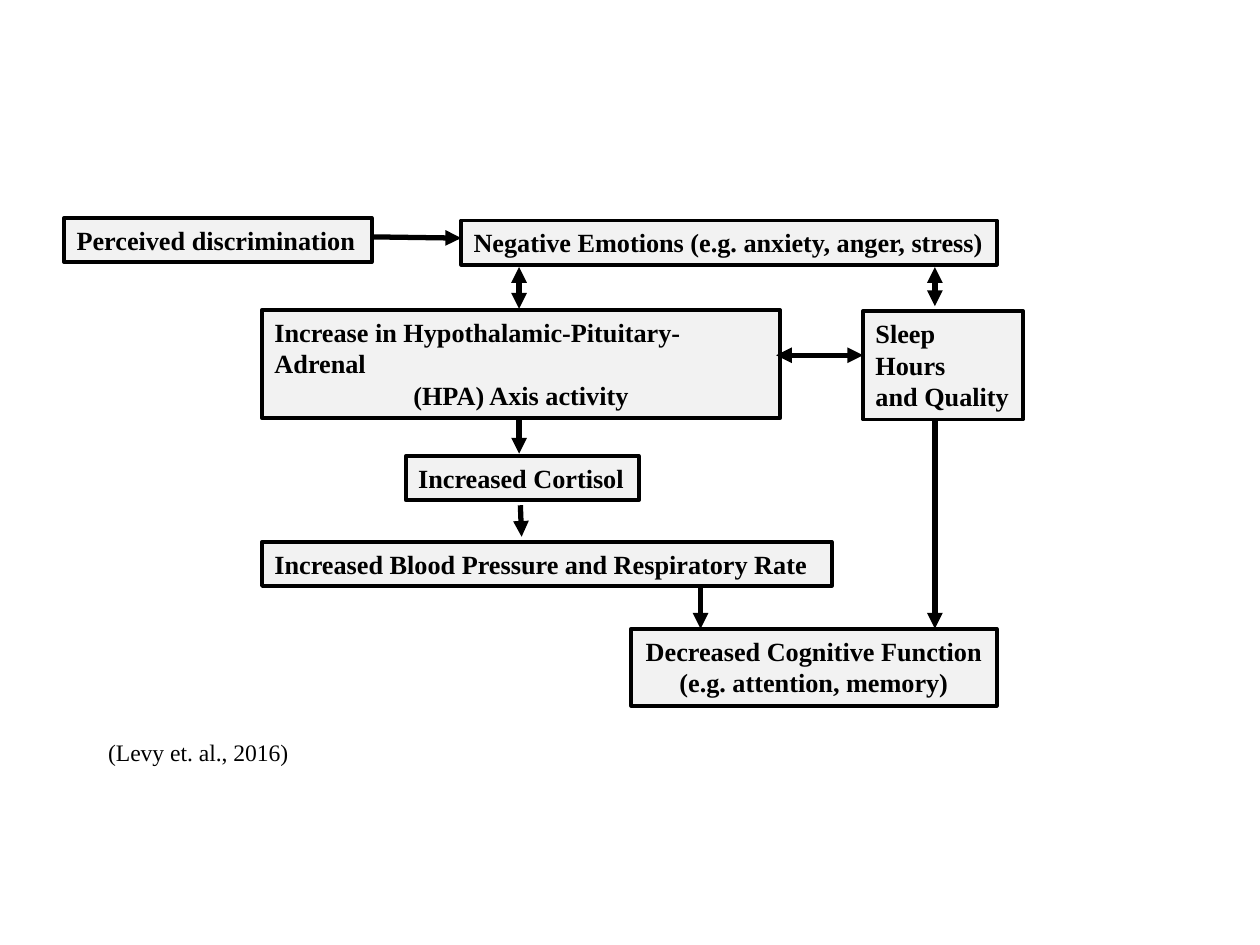
import pptx
import pptx.dml.color
import pptx.enum.shapes
import pptx.enum.text
import pptx.util
from lxml import etree
from pptx.oxml.ns import qn

COLORS = {"ink": "000000", "box": "F2F2F2"}
LEFT = pptx.enum.text.PP_ALIGN.LEFT
CENTER = pptx.enum.text.PP_ALIGN.CENTER


class Diagram:
    """Draw flow-chart elements on a slide with a grid of 100 columns and 75 rows."""

    font = "Times New Roman"
    cell = pptx.util.Inches(0.1)

    def __init__(self, prs):
        self.s = prs.slides.add_slide(prs.slide_layouts[6])

    def grid(self, *lengths):
        return [round(n * self.cell) for n in lengths]

    def color(self, name):
        return pptx.dml.color.RGBColor.from_string(COLORS[name])

    def set_text(self, sp, lines, size, bold):
        tf = sp.text_frame
        tf.word_wrap = True
        tf.auto_size = pptx.enum.text.MSO_AUTO_SIZE.SHAPE_TO_FIT_TEXT
        tf.vertical_anchor = pptx.enum.text.MSO_ANCHOR.TOP
        for i, (text, align) in enumerate(lines):
            p = tf.add_paragraph() if i else tf.paragraphs[0]
            p.text = text
            p.alignment = align
            p.font.name = self.font
            p.font.size = pptx.util.Pt(size)
            p.font.bold = bold
            p.font.color.rgb = self.color("ink")

    def box(self, col, row, cols, rows, *lines):
        rect = pptx.enum.shapes.MSO_SHAPE.RECTANGLE
        sp = self.s.shapes.add_shape(rect, *self.grid(col, row, cols, rows))
        sp.shadow.inherit = False
        sp.fill.solid()
        sp.fill.fore_color.rgb = self.color("box")
        sp.line.color.rgb = self.color("ink")
        sp.line.width = pptx.util.Pt(2.25)
        self.set_text(sp, lines, 15, True)

    def arrow(self, x1, y1, x2, y2, both=False):
        straight = pptx.enum.shapes.MSO_CONNECTOR.STRAIGHT
        sp = self.s.shapes.add_connector(straight, *self.grid(x1, y1, x2, y2))
        sp.line.color.rgb = self.color("ink")
        sp.line.width = pptx.util.Pt(3)
        ln = sp._element.spPr.find(qn("a:ln"))
        for end in ("a:headEnd", "a:tailEnd") if both else ("a:tailEnd",):
            etree.SubElement(ln, qn(end), type="triangle")
        etree.SubElement(sp._element.spPr, qn("a:effectLst"))

    def caption(self, col, row, cols, rows, text):
        sp = self.s.shapes.add_textbox(*self.grid(col, row, cols, rows))
        self.set_text(sp, [(text, LEFT)], 13.5, False)


def main():
    prs = pptx.Presentation()
    prs.slide_width = pptx.util.Inches(10)
    prs.slide_height = pptx.util.Inches(7.5)
    d = Diagram(prs)
    stress_x, sleep_x, line_h = 41.2, 74.2, 3.5

    d.arrow(29.5, 18.8, 36.6, 18.9)
    d.box(5.1, 17.3, 24.4, line_h, ("Perceived discrimination", LEFT))
    d.box(36.6, 17.5, 42.5, line_h,
          ("Negative Emotions (e.g. anxiety, anger, stress)", LEFT))
    d.box(20.8, 24.6, 41.1, 8.6,
          ("Increase in Hypothalamic-Pituitary-Adrenal", LEFT),
          ("(HPA) Axis activity", CENTER))
    d.arrow(stress_x, 33.2, stress_x, 36)
    d.box(68.5, 24.7, 12.7, 8.6, ("Sleep Hours", LEFT), ("and Quality", LEFT))
    d.arrow(stress_x, 21.2, stress_x, 24.5, both=True)
    d.arrow(sleep_x, 21.2, sleep_x, 24.3, both=True)
    d.arrow(61.6, 28.2, 68.5, 28.2, both=True)
    d.box(32.2, 36.2, 18.5, line_h, ("Increased Cortisol", LEFT))
    d.arrow(41.3, 40.1, 41.4, 42.6)
    d.box(50.1, 49.9, 29, 6.1,
          ("Decreased Cognitive Function (e.g. attention, memory)", CENTER))
    d.arrow(sleep_x, 33.2, sleep_x, 49.9)
    d.box(20.8, 43, 45.2, line_h,
          ("Increased Blood Pressure and Respiratory Rate", LEFT))
    d.arrow(55.6, 46.7, 55.6, 49.9)
    d.caption(7.6, 58.1, 16.4, 3.3, "(Levy et. al., 2016)")

    prs.save("out.pptx")


if __name__ == "__main__":
    main()
